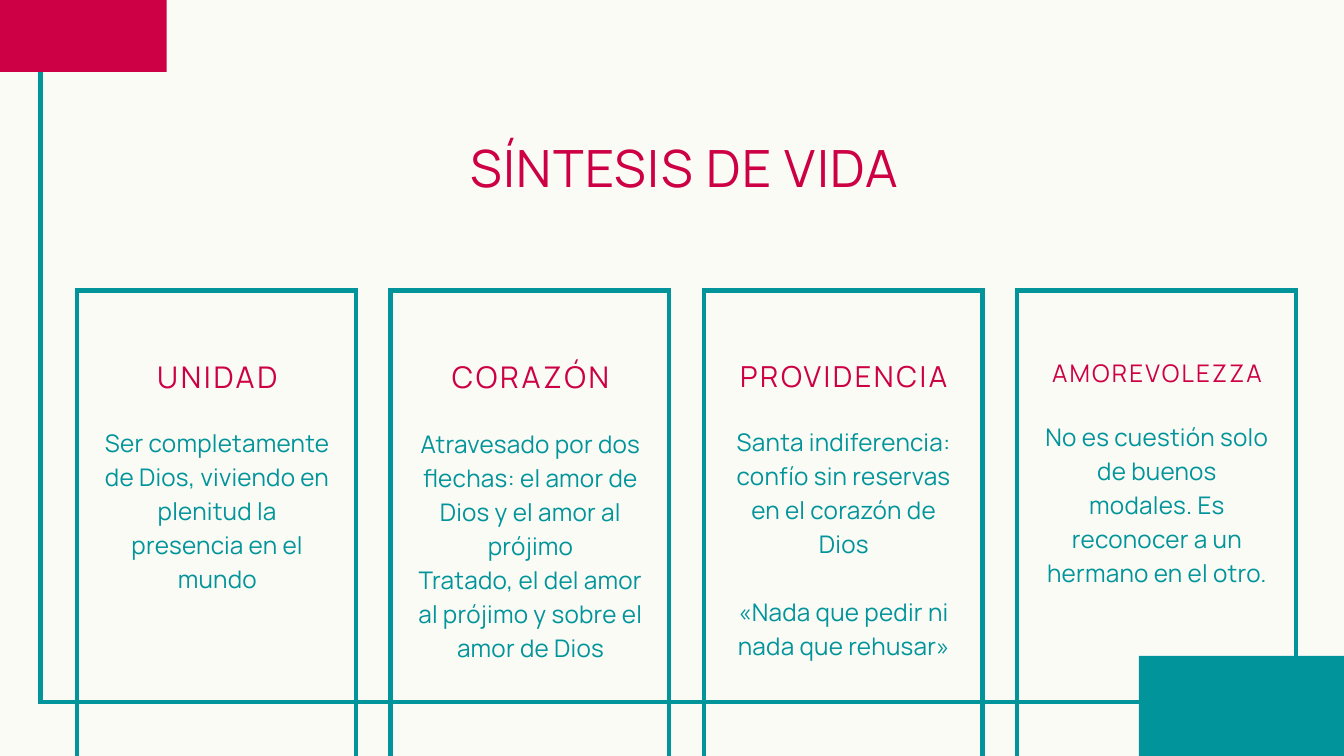
from pptx import Presentation
from pptx.dml.color import RGBColor as Rgb
from pptx.enum.shapes import MSO_SHAPE as Kind
from pptx.enum.text import PP_ALIGN as Align
from pptx.oxml.ns import qn
from pptx.util import Cm, Pt
from lxml.etree import SubElement as Sub

TITLE = "SÍNTESIS DE VIDA"
CARDS = [
    {"head": "UNIDAD", "size": 32, "top": 16, "high": 8.81, "gap": 0, "body": [
        "Ser completamente de Dios, viviendo en plenitud la presencia en el mundo"]},
    {"head": "CORAZÓN", "size": 32, "top": 16.03, "high": 10.08, "gap": 0, "body": [
        "Atravesado por dos flechas: el amor de Dios y el amor al prójimo",
        "Tratado, el del amor al prójimo y sobre el amor de Dios"]},
    {"head": "PROVIDENCIA", "size": 31, "top": 15.98, "high": 8.81, "gap": 1, "body": [
        "Santa indiferencia: confío sin reservas en el corazón de Dios",
        "«Nada que pedir ni nada que rehusar»"]},
    {"head": "AMOREVOLEZZA", "size": 26, "top": 15.77, "high": 6.27, "gap": 0, "body": [
        "No es cuestión solo de buenos modales. Es reconocer a un hermano en el otro."]},
]
THEME = {
    "font": "Manrope",
    "paper": Rgb.from_string("FBFBF5"),
    "teal": Rgb.from_string("01949A"),
    "red": Rgb.from_string("CD0046"),
    "title": 55,
    "body": 26,
    "line": 4.6,
}
LEFT, STEP = 2.92, 11.84
INSET = 0.99

deck = Presentation()
deck.slide_width, deck.slide_height = Cm(50.8), Cm(28.575)
slide = deck.slides.add_slide(deck.slide_layouts[6])
slide.background.fill.solid()
slide.background.fill.fore_color.rgb = THEME["paper"]


def box(*area):
    shape = slide.shapes.add_shape(Kind.RECTANGLE, *map(Cm, area))
    shape.shadow.inherit = False
    return shape


def frame(*area):
    shape = box(*area)
    shape.fill.background()
    shape.line.color.rgb = THEME["teal"]
    shape.line.width = Pt(THEME["line"])
    Sub(shape.line._get_or_add_ln(), qn("a:miter"), lim="800000")


def block(color, *area):
    shape = box(*area)
    shape.fill.solid()
    shape.fill.fore_color.rgb = THEME[color]
    shape.line.fill.background()


def write(lines, size, color, space, lead, area, gap=0):
    text = slide.shapes.add_textbox(*map(Cm, area)).text_frame
    text.word_wrap = True
    text.margin_left = text.margin_right = text.margin_top = text.margin_bottom = 0
    text.text = "\n".join(lines)
    for spot, para in enumerate(text.paragraphs):
        para.alignment = Align.CENTER
        para.line_spacing = Pt(size * lead)
        if spot and gap:
            para.space_before = Pt(size * lead * gap)
        for run in para.runs:
            font = run.font
            font.name, font.size = THEME["font"], Pt(size)
            font.color.rgb = THEME[color]
            run._r.get_or_add_rPr().set("spc", str(round(size * space * 100)))


frame(1.53, -3.1, 51.61, 29.63)
write([TITLE], THEME["title"], "red", 0.03, 1.28, (8.69, 5, 34.37, 2.46))

for spot, card in enumerate(CARDS):
    left = LEFT + spot * STEP
    frame(left, 10.98, 10.54, 18.36)
    write([card["head"]], card["size"], "red", 0.09, 1.4,
          (left + INSET, 13.34, 8.61, card["size"] * 0.046))
    write(card["body"], THEME["body"], "teal", 0.01, 1.4,
          (left + INSET, card["top"], 8.61, card["high"]), card["gap"])

block("teal", 43.05, 24.79, 7.75, 7.57)
block("red", -3.38, -0.91, 9.68, 3.63)

deck.save("out.pptx")
